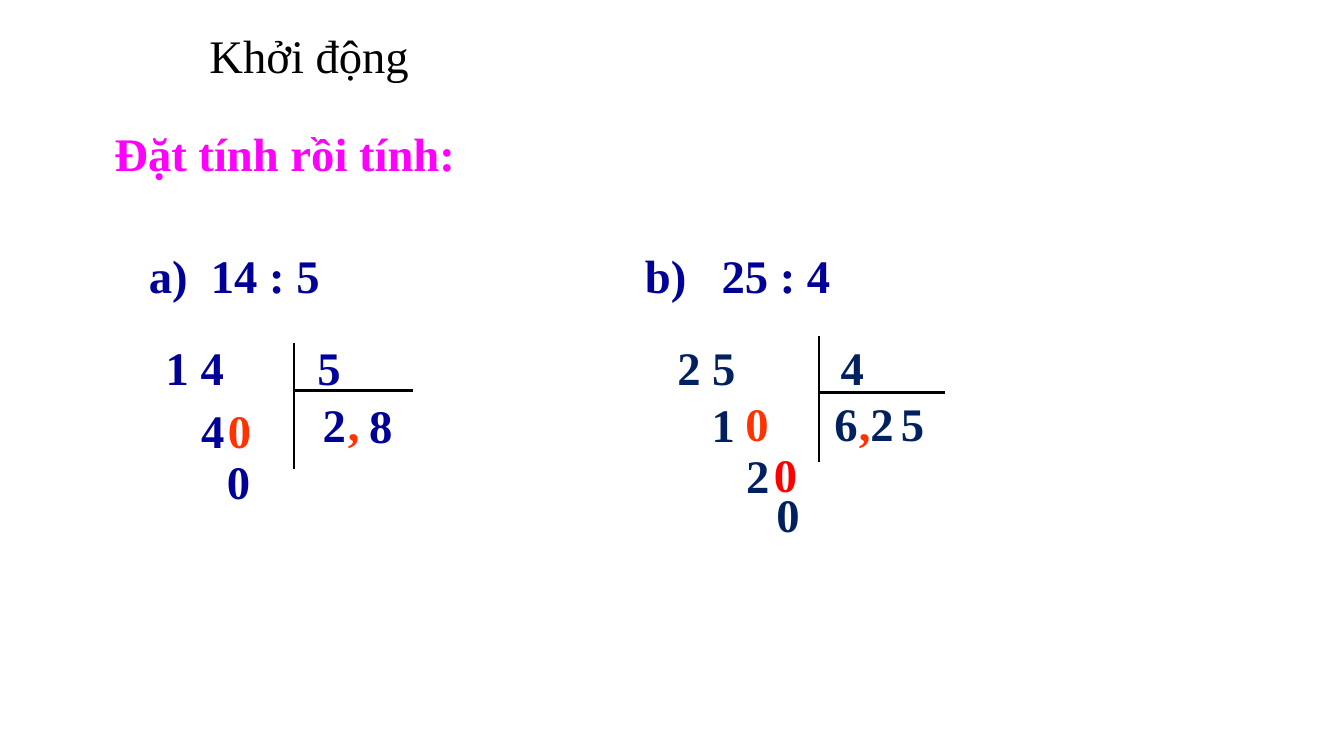
from lxml import etree
from pptx import Presentation
from pptx.dml.color import RGBColor
from pptx.enum.shapes import MSO_CONNECTOR
from pptx.enum.text import MSO_AUTO_SIZE, PP_ALIGN
from pptx.oxml.ns import qn
from pptx.util import Cm, Pt

STRAIGHT = MSO_CONNECTOR.STRAIGHT
GROW = MSO_AUTO_SIZE.SHAPE_TO_FIT_TEXT
LEFT, CENTER = PP_ALIGN.LEFT, PP_ALIGN.CENTER

BLACK = RGBColor(0x00, 0x00, 0x00)
MAGENTA = RGBColor(0xFF, 0x00, 0xFF)
BLUE = RGBColor(0x00, 0x00, 0x99)
NAVY = RGBColor(0x00, 0x20, 0x60)
ORANGE = RGBColor(0xFF, 0x33, 0x00)
RED = RGBColor(0xFF, 0x00, 0x00)

LINE_HEIGHT = 2.08
DIGIT_WIDTH = 1.45


def add_text(slide, text, left, top, width, color, bold=True, align=LEFT, tabs=()):
    """Place one line of text; all lengths, tab stops included, are in cm."""
    box = slide.shapes.add_textbox(Cm(left), Cm(top), Cm(width), Cm(LINE_HEIGHT))
    frame = box.text_frame
    frame.word_wrap = True
    frame.auto_size = GROW
    frame.margin_left = frame.margin_right = Cm(0.36)
    frame.margin_top, frame.margin_bottom = Cm(0.29), Cm(0.18)
    paragraph = frame.paragraphs[0]
    paragraph.text = text
    paragraph.alignment = align
    if tabs:
        tab_list = etree.SubElement(paragraph._p.get_or_add_pPr(), qn("a:tabLst"))
        for stop in tabs:
            etree.SubElement(tab_list, qn("a:tab"), pos=str(Cm(stop)), algn="l")
    for run in paragraph.runs:
        run.font.name = "Times New Roman"
        run.font.size = Pt(40)
        run.font.bold = bold
        run.font.color.rgb = color


def add_rule(slide, x1, y1, x2, y2):
    rule = slide.shapes.add_connector(STRAIGHT, Cm(x1), Cm(y1), Cm(x2), Cm(y2))
    rule.line.color.rgb = BLACK
    rule.line.width = Pt(2.25)
    etree.SubElement(rule._element.spPr, qn("a:effectLst"))


def add_headings(slide, left, top):
    add_text(slide, "Khởi động", left, top, 12.5, BLACK, bold=False, align=CENTER)
    add_text(slide, "Đặt tính rồi tính:", left, top + 2.95, 12.5, MAGENTA)
    add_text(slide, "a)\t14 : 5\tb)\t25 : 4", left + 1.04, top + 6.66, 21.9, BLUE,
             tabs=(1.88, 15, 17.32))


def add_division(slide, left, top, operands, divisor_tab, color, corner, bar, digits):
    """Draw a long division; corner, bar and digits are relative to left, top."""
    add_text(slide, operands, left, top, 7.5, color, tabs=(divisor_tab,))
    x, y = left + corner[0], top + corner[1]
    bar_y, bar_length = top + bar[0], bar[1]
    add_rule(slide, x, y, x, y + 3.81)
    add_rule(slide, x, bar_y, x + bar_length, bar_y)
    for digit, dx, dy, digit_color in digits:
        add_text(slide, digit, left + dx, top + dy, DIGIT_WIDTH, digit_color)


def main():
    prs = Presentation()
    prs.slide_width, prs.slide_height = Cm(40.64), Cm(22.86)
    slide = prs.slides.add_slide(prs.slide_layouts[6])

    add_headings(slide, 3.1, 0.53)
    add_division(
        slide, 4.65, 9.96, "1 4\t5", 4.59, BLUE, corner=(4.24, 0.41), bar=(1.85, 3.61),
        digits=[
            ("2", 4.75, 1.73, BLUE), (",", 5.51, 1.68, ORANGE), ("8", 6.15, 1.75, BLUE),
            ("4", 1.07, 1.9, BLUE), ("0", 1.88, 1.9, ORANGE),
            ("0", 1.85, 3.43, BLUE),
        ])
    add_division(
        slide, 20.12, 9.96, "2 5\t4", 4.94, NAVY, corner=(4.65, 0.2), bar=(1.9, 3.81),
        digits=[
            ("6", 4.75, 1.68, NAVY), (",", 5.49, 1.68, ORANGE),
            ("2", 5.84, 1.68, NAVY), ("5", 6.76, 1.68, NAVY),
            ("1", 1.04, 1.73, NAVY), ("0", 2.06, 1.68, ORANGE),
            ("2", 2.08, 3.25, NAVY), ("0", 2.92, 3.23, RED),
            ("0", 3, 4.45, NAVY),
        ])

    prs.save("out.pptx")


if __name__ == "__main__":
    main()
